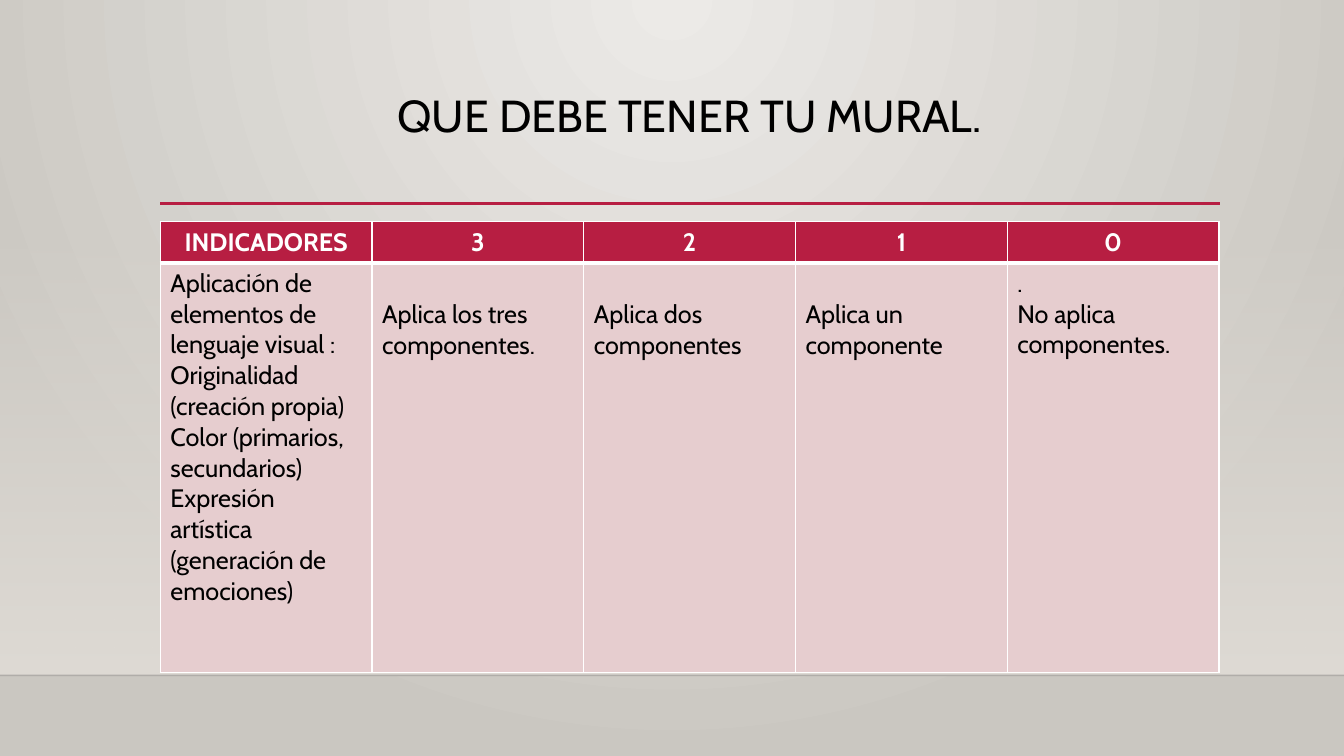
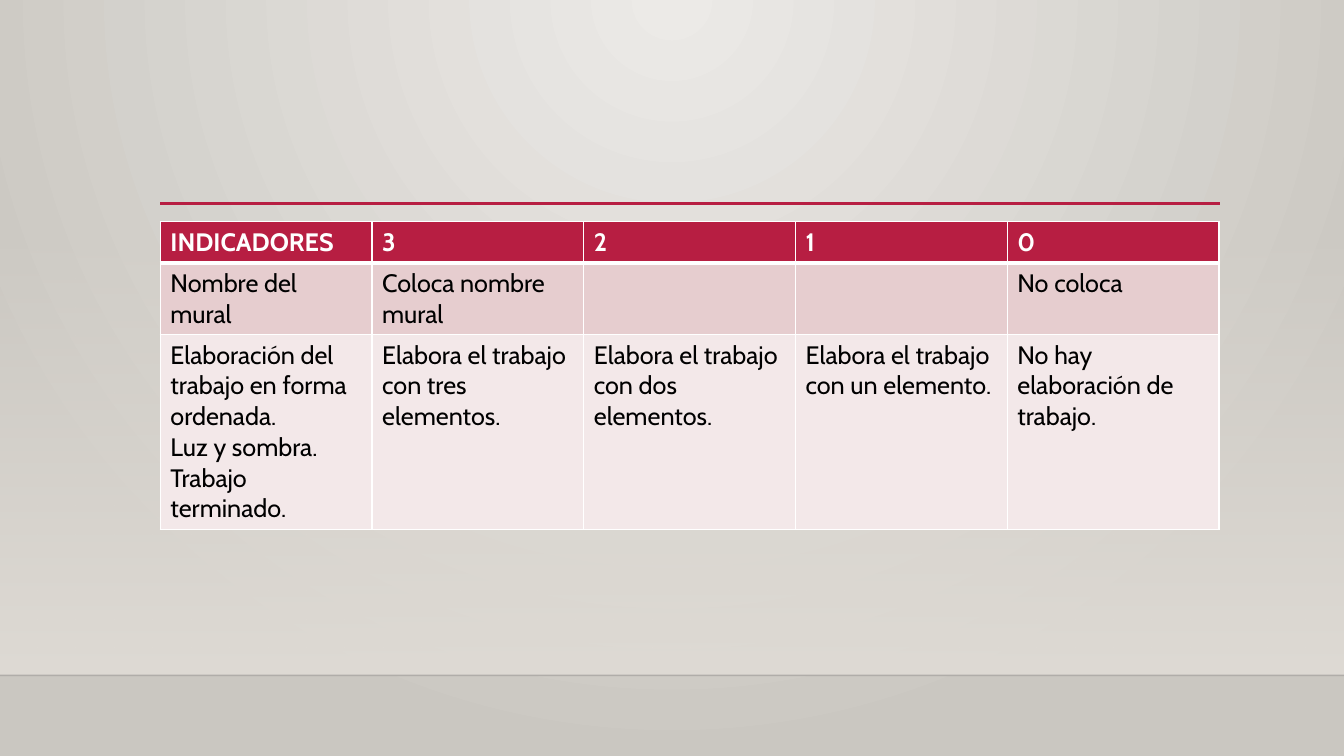
from lxml import etree
from pptx import Presentation
from pptx.dml.color import RGBColor
from pptx.enum.shapes import MSO_CONNECTOR, MSO_SHAPE
from pptx.enum.text import MSO_ANCHOR, MSO_AUTO_SIZE, PP_ALIGN
from pptx.oxml.ns import qn
from pptx.util import Inches, Pt

RECTANGLE, STRAIGHT = MSO_SHAPE.RECTANGLE, MSO_CONNECTOR.STRAIGHT
TOP, NO_FIT = MSO_ANCHOR.TOP, MSO_AUTO_SIZE.NONE
LEFT, CENTER = PP_ALIGN.LEFT, PP_ALIGN.CENTER

COLORS = {
    "center": "ECEAE7", "edge": "CAC7C1", "wall": "DFDBD5", "floor": "000001",
    "accent": "B71E42", "text": "000000", "white": "FFFFFF",
    "band_dark": "E6CDCF", "band_light": "F3E8E9",
}
FONT = "Cabin"
WIDTH, HEIGHT = 13.33, 7.5
MARGIN, COLUMN, COLUMNS = 1.59, 2.1, 5
CONTENT = COLUMN * COLUMNS
RULE_TOP, TABLE_TOP, FLOOR_TOP = 2.02, 2.2, 6.7
HEADER_HEIGHT, LINE_DROP = 0.41, 0.36
HEADERS = ["INDICADORES", "3", "2", "1", "0"]

MURAL_ROWS = [[
    ["Aplicación de elementos de lenguaje visual :",
     "Originalidad (creación propia)",
     "Color (primarios, secundarios)",
     "Expresión artística (generación de emociones)"],
    ["Aplica los tres componentes."],
    ["Aplica dos componentes"],
    ["Aplica un componente"],
    [".", "No aplica componentes."],
]]
WORK_ROWS = [
    [["Nombre del mural"], ["Coloca nombre mural"], [], [], ["No coloca"]],
    [["Elaboración del trabajo en forma ordenada.", "Luz y sombra.", "Trabajo terminado."],
     ["Elabora el trabajo con tres elementos."],
     ["Elabora el trabajo con dos elementos."],
     ["Elabora el trabajo con un elemento."],
     ["No hay elaboración de trabajo."]],
]


def rgb(name):
    """Return the named palette colour."""
    return RGBColor.from_string(COLORS[name])


def add_node(parent, tag, **values):
    """Append a drawing element with the given attributes."""
    return etree.SubElement(parent, qn(tag), {key: str(value) for key, value in values.items()})


def fill_gradient(old_fill, stops):
    """Put a gradient of (position, colour, alpha) stops in place of a fill; return it."""
    gradient = etree.Element(qn("a:gradFill"), {"rotWithShape": "1"})
    stop_list = add_node(gradient, "a:gsLst")
    for position, name, alpha in stops:
        stop = add_node(stop_list, "a:gs", pos=position * 1000)
        color = add_node(stop, "a:srgbClr", val=COLORS[name])
        add_node(color, "a:alpha", val=alpha * 1000)
    old_fill.getparent().replace(old_fill, gradient)
    return gradient


def style_background(master):
    """Give the master a glow that spreads from the top centre."""
    master.background.fill.solid()
    old_fill = master.element.find(".//" + qn("p:bgPr")).find(qn("a:solidFill"))
    gradient = fill_gradient(old_fill, [(0, "center", 100), (100, "edge", 100)])
    glow = add_node(gradient, "a:path", path="circle")
    add_node(glow, "a:fillToRect", l=43000, t=0, r=43000, b=100000)


def add_wall(page):
    """Add the wall that fades in down to the floor."""
    top = 2.21
    wall = page.shapes.add_shape(RECTANGLE, 0, Inches(top), Inches(WIDTH), Inches(FLOOR_TOP - top))
    wall.shadow.inherit = False
    wall.line.fill.background()
    wall.fill.solid()
    old_fill = wall.element.spPr.find(qn("a:solidFill"))
    gradient = fill_gradient(old_fill, [(0, "wall", 0), (100, "wall", 100)])
    add_node(gradient, "a:lin", ang=5400000, scaled=0)
    return wall


def add_rule(page, left, right, top, name, weight, alpha=100):
    """Add a horizontal line."""
    rule = page.shapes.add_connector(STRAIGHT, Inches(left), Inches(top), Inches(right), Inches(top))
    rule.line.color.rgb = rgb(name)
    rule.line.width = Pt(weight)
    add_node(rule.element.find(".//" + qn("a:srgbClr")), "a:alpha", val=alpha * 1000)
    add_node(rule.element.spPr, "a:effectLst")
    return rule


def build_master(master, page):
    """Draw the shared scenery on a page and move it to the master."""
    style_background(master)
    scenery = [
        add_wall(page),
        add_rule(page, 0, WIDTH, FLOOR_TOP, "floor", 1, 20),
        add_rule(page, MARGIN, MARGIN + CONTENT + 0.01, RULE_TOP, "accent", 2.5),
    ]
    tree = master.shapes.element if hasattr(master.shapes, "element") else master.element.cSld.spTree
    for index, shape in enumerate(scenery):
        tree.insert(2 + index, shape.element)


def format_font(font, size, name, bold=False):
    """Apply the shared font with a size, colour and weight."""
    for key, value in {"name": FONT, "size": Pt(size), "bold": bold}.items():
        setattr(font, key, value)
    font.color.rgb = rgb(name)


def place_title(page, text):
    """Place the title above the accent rule."""
    title = page.shapes.title
    box = {"left": MARGIN, "top": 0.88, "width": CONTENT, "height": 1.15}
    for key, value in box.items():
        setattr(title, key, Inches(value))
    frame = title.text_frame
    for key, value in {"auto_size": NO_FIT, "vertical_anchor": TOP, "word_wrap": True}.items():
        setattr(frame, key, value)
    frame.text = text
    para = frame.paragraphs[0]
    para.alignment, para.line_spacing = CENTER, 0.9
    format_font(para.runs[0].font, 32, "text")


def draw_borders(cell, bottom):
    """Outline a cell in white, with its own bottom weight."""
    properties = cell._tc.get_or_add_tcPr()
    weights = {"a:lnL": 1, "a:lnR": 1, "a:lnT": 1, "a:lnB": bottom}
    for index, (tag, weight) in enumerate(weights.items()):
        border = etree.Element(qn(tag), {"w": str(Pt(weight))})
        add_node(add_node(border, "a:solidFill"), "a:srgbClr", val=COLORS["white"])
        properties.insert(index, border)


def fill_cell(cell, lines, fill, header, alignment):
    """Write a cell's paragraphs and format the cell."""
    cell.fill.solid()
    cell.fill.fore_color.rgb = rgb(fill)
    draw_borders(cell, 3 if header else 1)
    cell.text = "\n".join(lines)
    for para in cell.text_frame.paragraphs:
        para.alignment = alignment
        format_font(para.font, 18, "white" if header else "text", header)
        for span in para.runs:
            format_font(span.font, 18, "white" if header else "text", header)


def add_rubric(page, rows, heights, header_alignment=LEFT, dropped=()):
    """Add a rubric table; the dropped columns start one line lower."""
    all_rows = [[[header] for header in HEADERS]] + rows
    all_heights = [HEADER_HEIGHT] + heights
    frame = page.shapes.add_table(len(all_rows), COLUMNS, Inches(MARGIN), Inches(TABLE_TOP),
                                  Inches(CONTENT), Inches(sum(all_heights)))
    table = frame.table
    table.horz_banding = False
    for column in table.columns:
        column.width = Inches(COLUMN)
    for row, (texts, height) in enumerate(zip(all_rows, all_heights)):
        table.rows[row].height = Inches(height)
        header = row == 0
        fill = "accent" if header else ("band_light", "band_dark")[row % 2]
        for column, lines in enumerate(texts):
            cell = table.cell(row, column)
            fill_cell(cell, lines, fill, header, header_alignment if header else LEFT)
            if not header and column in dropped:
                cell.margin_top = Inches(LINE_DROP)


def main():
    """Build and save the deck."""
    deck = Presentation()
    deck.slide_width, deck.slide_height = Inches(WIDTH), Inches(HEIGHT)
    mural = deck.slides.add_slide(deck.slide_layouts[5])
    build_master(deck.slide_master, mural)
    place_title(mural, "QUE DEBE TENER TU MURAL.")
    add_rubric(mural, MURAL_ROWS, [4.06], CENTER, dropped=(1, 2, 3))
    work = deck.slides.add_slide(deck.slide_layouts[6])
    add_rubric(work, WORK_ROWS, [0.71, 1.93])
    deck.save("out.pptx")


if __name__ == "__main__":
    main()
